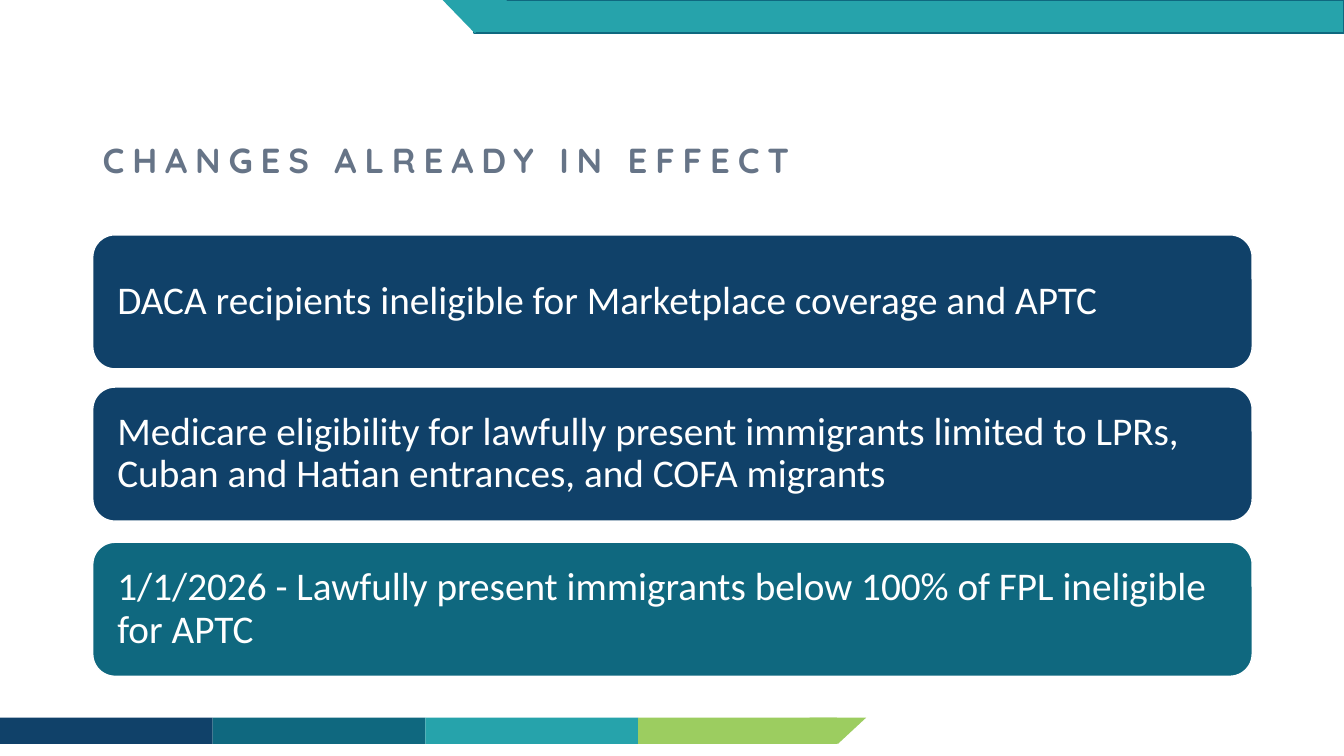
from dataclasses import dataclass

from pptx import Presentation
from pptx import util as u
from pptx.dml.color import RGBColor
from pptx.enum import shapes, text

NAVY, TEAL, AQUA, GREEN = "104169", "0F687F", "26A3AB", "9CCD60"
WHITE, SLATE = "FFFFFF", "667487"
RECT = shapes.MSO_SHAPE.RECTANGLE
TRIANGLE = shapes.MSO_SHAPE.ISOSCELES_TRIANGLE
ROUNDED = shapes.MSO_SHAPE.ROUNDED_RECTANGLE


@dataclass
class Block:
    left: float
    top: float
    width: float
    height: float
    fill: str
    kind: int = RECT
    line: str | None = None
    rotation: int = 0


@dataclass
class Change:
    top: float
    fill: str
    wording: str


def color(value: str) -> RGBColor:
    return RGBColor.from_string(value)


def draw_block(slide, block: Block):
    drawn = slide.shapes.add_shape(
        block.kind, u.Inches(block.left), u.Inches(block.top),
        u.Inches(block.width), u.Inches(block.height))
    drawn.shadow.inherit = False
    drawn.rotation = block.rotation
    drawn.fill.solid()
    drawn.fill.fore_color.rgb = color(block.fill)
    if block.line:
        drawn.line.color.rgb = color(block.line)
        drawn.line.width = u.Pt(1)
    else:
        drawn.line.fill.background()
    return drawn


def write(frame, wording: str, size: float, font: str, ink: str, inset: float):
    frame.word_wrap = True
    frame.vertical_anchor = text.MSO_ANCHOR.MIDDLE
    frame.margin_left = frame.margin_right = u.Inches(inset)
    frame.text = wording
    paragraph = frame.paragraphs[0]
    paragraph.alignment = text.PP_ALIGN.LEFT
    paragraph.line_spacing = 0.9
    run = paragraph.runs[0]
    run.font.size = u.Pt(size)
    run.font.name = font
    run.font.color.rgb = color(ink)
    return run


def draw_change(slide, change: Change) -> None:
    card = draw_block(slide, Block(0.92, change.top, 11.5, 1.33, change.fill, ROUNDED, WHITE))
    write(card.text_frame, change.wording, 28, "Calibri", WHITE, 0.18)


def draw_title(slide, wording: str) -> None:
    title = slide.shapes.add_textbox(
        u.Inches(0.92), u.Inches(0.88), u.Inches(11.5), u.Inches(1.45))
    run = write(title.text_frame, wording, 24.8, "Quicksand", SLATE, 0.1)
    run.font.bold = True
    # Letter spacing, in hundredths of a point
    run.font._element.set("spc", "560")


# Footer strip, then header band with its slanted end
STEP = 2.11
FOOTER = [Block(i * STEP, 7.12, width, 0.26, fill) for i, (fill, width) in enumerate(
    [(NAVY, STEP), (TEAL, STEP), (AQUA, STEP), (GREEN, 1.97)])]
FOOTER.append(Block(8.03, 7.12, 0.56, 0.26, GREEN, TRIANGLE, rotation=180))
HEADER = [
    Block(4.7, 0, 8.63, 0.33, AQUA, line=TEAL),
    Block(4.39, 0, 0.64, 0.33, AQUA, TRIANGLE, rotation=180),
]

CHANGES = [
    Change(2.33, NAVY, "DACA recipients ineligible for Marketplace coverage and APTC"),
    Change(3.84, NAVY, "Medicare eligibility for lawfully present immigrants limited to LPRs, "
                       "Cuban and Hatian entrances, and COFA migrants"),
    Change(5.38, TEAL, "1/1/2026 - Lawfully present immigrants below 100% of FPL "
                       "ineligible for APTC"),
]


def main() -> None:
    deck = Presentation()
    deck.slide_width, deck.slide_height = u.Inches(13.33), u.Inches(7.5)
    slide = deck.slides.add_slide(deck.slide_layouts[6])
    for block in FOOTER + HEADER:
        draw_block(slide, block)
    for change in CHANGES:
        draw_change(slide, change)
    draw_title(slide, "CHANGES ALREADY IN EFFECT")
    deck.save("out.pptx")


if __name__ == "__main__":
    main()
